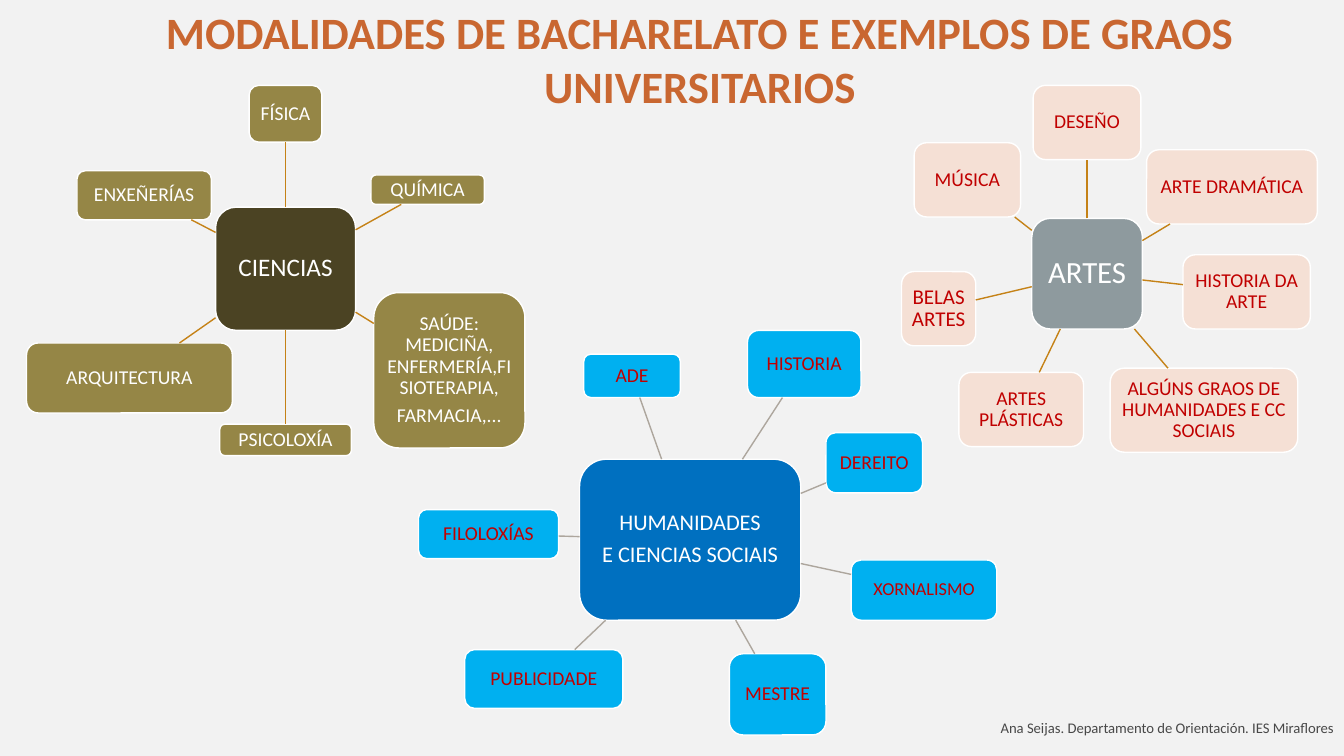
"""Build a slide with three mind maps of school tracks and related degrees."""
from lxml.etree import SubElement
from pptx import Presentation
from pptx.dml.color import RGBColor as RGB
from pptx.enum.shapes import MSO_CONNECTOR as LINE, MSO_SHAPE as SHAPE
from pptx.enum.text import MSO_ANCHOR as ANCHOR, MSO_AUTO_SIZE as FIT, PP_ALIGN as ALIGN
from pptx.oxml.ns import qn
from pptx.util import Pt

HUES = {
    "back": "F2F2F2", "title": "C96731", "white": "FFFFFF", "black": "000000",
    "red": "C00000", "gold": "C58217", "gray": "ADA69D",
    "brown": "4B4323", "olive": "958646", "blue": "0070C0", "sky": "00B0F0",
    "slate": "8E9A9E", "peach": "F5E0D5",
}
HUES = {key: RGB.from_string(val) for key, val in HUES.items()}

MAPS = [
    dict(hub=("CIENCIAS", 154, 148, 100, 88, 18), core="brown", leaf="olive",
         ink="white", line="gold", items=[
             ("FÍSICA", 178, 61, 52, 40.5, 14),
             ("QUÍMICA", 265, 125, 81, 21, 14),
             ("SAÚDE: MEDICIÑA, ENFERMERÍA,FISIOTERAPIA,\nFARMACIA,...",
              267, 209, 108, 111, 14),
             ("PSICOLOXÍA", 157, 303, 94, 22.5, 14),
             ("ARQUITECTURA", 19, 245, 147, 50, 14),
             ("ENXEÑERÍAS", 55, 122, 96, 35, 14)]),
    dict(hub=("HUMANIDADES\nE CIENCIAS SOCIAIS", 414, 328, 158, 115, 16),
         core="blue", leaf="sky", ink="red", line="gray", items=[
             ("HISTORIA", 534, 236, 81, 48, 14),
             ("DEREITO", 590, 309, 69, 43, 14),
             ("XORNALISMO", 608, 400, 104, 43, 13),
             ("ADE", 417, 253, 69, 31, 14),
             ("MESTRE", 521, 467, 69, 58, 14),
             ("PUBLICIDADE", 332, 464, 113, 42, 14),
             ("FILOLOXÍAS", 299, 364, 100, 35, 14)]),
    dict(hub=("ARTES", 737, 156, 79, 79, 22), core="slate", leaf="peach",
         ink="red", line="gold", items=[
             ("DESEÑO", 738, 61, 77, 53, 14),
             ("ARTE DRAMÁTICA", 819, 107, 122, 53, 14),
             ("ALGÚNS GRAOS DE HUMANIDADES E CC SOCIAIS", 793, 263, 134, 60, 14),
             ("HISTORIA DA ARTE", 845, 182, 91, 53, 14),
             ("ARTES PLÁSTICAS", 685, 266, 89, 53, 14),
             ("BELAS ARTES", 644, 194, 53, 53, 15),
             ("MÚSICA", 653, 102, 76, 53, 14)]),
]


def write(shape, text, size=14, ink="white", bold=False, align=ALIGN.CENTER,
          anchor=ANCHOR.MIDDLE, lead=1.0, after=0, pad=None):
    """Fill a shape with formatted text."""
    frame = shape.text_frame
    frame.text = text
    frame.word_wrap = True
    frame.auto_size = FIT.NONE
    frame.vertical_anchor = anchor
    if pad is not None:
        frame.margin_left = frame.margin_right = Pt(pad)
        frame.margin_top = frame.margin_bottom = Pt(pad)
    for para in frame.paragraphs:
        para.alignment = align
        para.line_spacing = lead
        para.space_before = Pt(0)
        para.space_after = Pt(after)
        for run in para.runs:
            run.font.name = "Calibri"
            run.font.size = Pt(size)
            run.font.bold = bold
            run.font.color.rgb = HUES[ink]


def draw(node, fill, ink):
    """Draw one rounded box of a map."""
    text, left, top, wide, high, size = node
    box = slide.shapes.add_shape(
        SHAPE.ROUNDED_RECTANGLE, Pt(left), Pt(top), Pt(wide), Pt(high))
    box.shadow.inherit = False
    box.fill.solid()
    box.fill.fore_color.rgb = HUES[fill]
    box.line.color.rgb = HUES["white"]
    box.line.width = Pt(1)
    write(box, text, size=size, ink=ink, lead=0.9, after=0.35 * size, pad=0.2 * size)
    return box


deck = Presentation()
deck.slide_width, deck.slide_height = Pt(960), Pt(540)
slide = deck.slides.add_slide(deck.slide_layouts[5])
slide.background.fill.solid()
slide.background.fill.fore_color.rgb = HUES["back"]

title = slide.shapes.title
title.left, title.top, title.width, title.height = Pt(18.5), Pt(0), Pt(963), Pt(133)
write(title, "MODALIDADES DE BACHARELATO E EXEMPLOS DE GRAOS UNIVERSITARIOS",
      size=32, ink="title", bold=True, anchor=ANCHOR.TOP)

credit = slide.shapes.add_textbox(Pt(360), Pt(505.5), Pt(600), Pt(29))
write(credit, "Ana Seijas. Departamento de Orientación. IES Miraflores",
      size=10.5, ink="black", align=ALIGN.RIGHT)
for tint in credit.text_frame.paragraphs[0].runs[0].font.fill._xPr.iter(qn("a:srgbClr")):
    SubElement(tint, qn("a:alpha")).set("val", "70000")

for plan in MAPS:
    hub = draw(plan["hub"], plan["core"], "white")
    midx, midy = hub.left + hub.width / 2, hub.top + hub.height / 2
    for node in plan["items"]:
        box = draw(node, plan["leaf"], plan["ink"])
        dx = box.left + box.width / 2 - midx
        dy = box.top + box.height / 2 - midy
        near, far = [min(part.width / 2 / max(abs(dx), 1),
                         part.height / 2 / max(abs(dy), 1)) for part in (hub, box)]
        ends = [int(pos) for cut in (near, 1 - far)
                for pos in (midx + dx * cut, midy + dy * cut)]
        spoke = slide.shapes.add_connector(LINE.STRAIGHT, *ends)
        spoke.line.color.rgb = HUES[plan["line"]]
        spoke.line.width = Pt(1)
        SubElement(spoke._element.spPr, qn("a:effectLst"))
        if abs(dx) < Pt(1):
            spoke.begin_connect(hub, 0 if dy < 0 else 2)
            spoke.end_connect(box, 2 if dy < 0 else 0)

deck.save("out.pptx")
